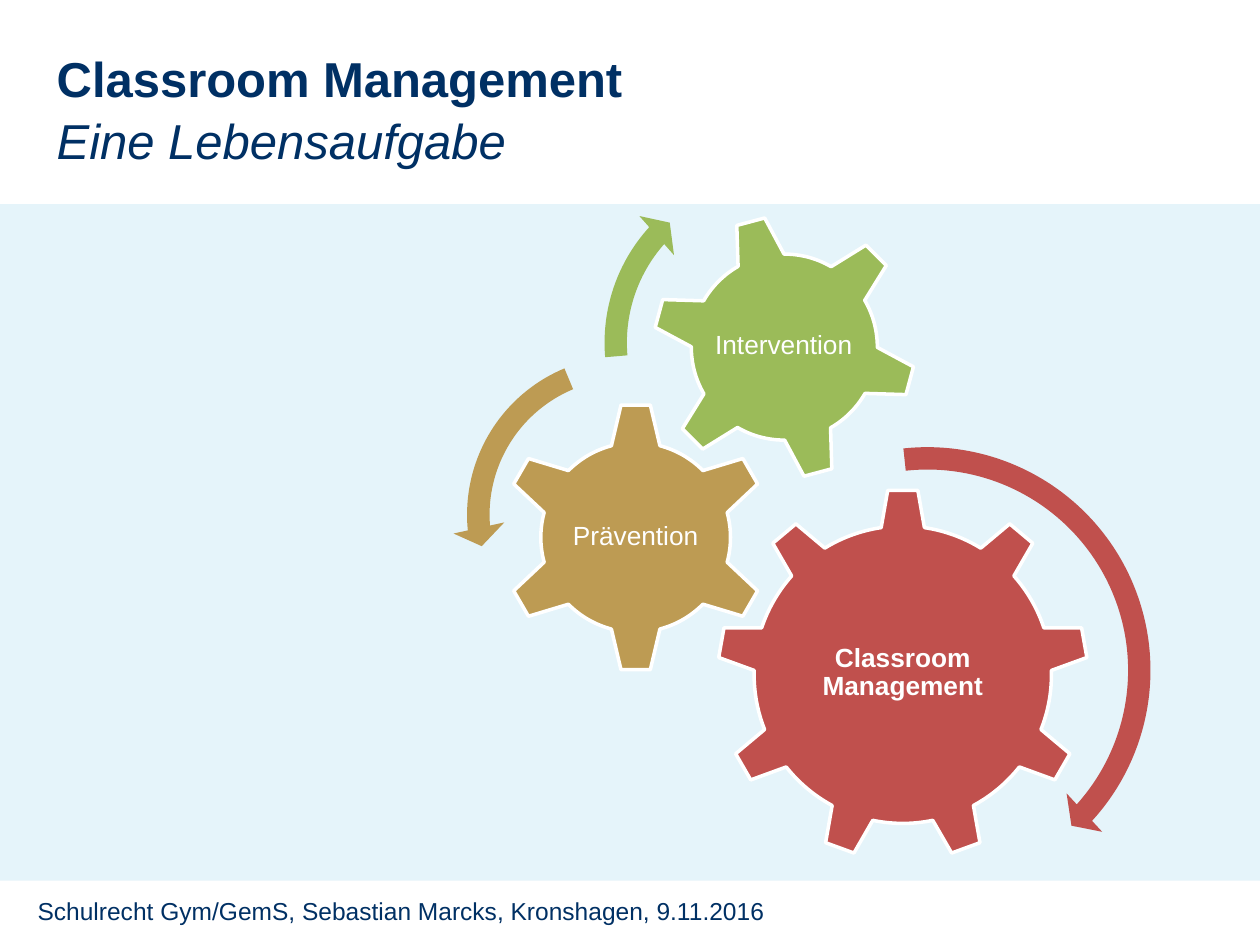
"""Build a slide with three interlocking gears on classroom management."""
from pptx import Presentation
from pptx.dml.color import RGBColor
from pptx.enum.shapes import MSO_SHAPE
from pptx.enum.text import MSO_ANCHOR, MSO_AUTO_SIZE, PP_ALIGN
from pptx.util import Inches, Pt

RECTANGLE = MSO_SHAPE.RECTANGLE
GEAR_6, GEAR_9 = MSO_SHAPE.GEAR_6, MSO_SHAPE.GEAR_9
ARROW, LEFT_ARROW = MSO_SHAPE.CIRCULAR_ARROW, MSO_SHAPE.LEFT_CIRCULAR_ARROW
TOP, MIDDLE = MSO_ANCHOR.TOP, MSO_ANCHOR.MIDDLE
LEFT, CENTER = PP_ALIGN.LEFT, PP_ALIGN.CENTER
NO_AUTOFIT = MSO_AUTO_SIZE.NONE
NAVY, WHITE, PALE_BLUE = "003064", "FFFFFF", "E5F4FA"
RED, OCHRE, GREEN = "C0504D", "BD9B53", "9BBB59"


def add_filled_shape(shapes, kind, box, color):
    shape = shapes.add_shape(kind, *map(Inches, box))
    shape.shadow.inherit = False
    shape.fill.solid()
    shape.fill.fore_color.rgb = RGBColor.from_string(color)
    shape.line.fill.background()
    return shape


def format_text(paragraph, size, color, bold=False, italic=False):
    for run in paragraph.runs:
        run.font.name = "Arial"
        run.font.size = Pt(size)
        run.font.bold = bold
        run.font.italic = italic
        run.font.color.rgb = RGBColor.from_string(color)


presentation = Presentation()
presentation.slide_width = Inches(10)
presentation.slide_height = Inches(7.5)
slide = presentation.slides.add_slide(presentation.slide_layouts[5])

add_filled_shape(slide.shapes, RECTANGLE, (0, 1.62, 10, 5.37), PALE_BLUE)

title = slide.shapes.title
title.left, title.top = Inches(0.35), Inches(0.31)
title.width, title.height = Inches(5.35), Inches(1.04)
title_frame = title.text_frame
title_frame.text = "Classroom Management\nEine Lebensaufgabe"
title_frame.auto_size = NO_AUTOFIT
title_frame.vertical_anchor = TOP
for paragraph, bold in zip(title_frame.paragraphs, (True, False)):
    paragraph.alignment = LEFT
    paragraph.line_spacing = 1.05
    format_text(paragraph, 28, NAVY, bold, not bold)

footer = slide.shapes.add_textbox(Inches(0.2), Inches(7.06), Inches(8.58), Inches(0.52))
footer.text_frame.word_wrap = True
footer.text_frame.text = "Schulrecht Gym/GemS, Sebastian Marcks, Kronshagen, 9.11.2016"
format_text(footer.text_frame.paragraphs[0], 14, NAVY)

gear_group = slide.shapes.add_group_shape()
gears = [
    (GEAR_9, (5.69, 3.88, 2.95, 2.95), 0, RED, "Classroom Management", (6.28, 4.58, 1.77, 1.52), True),
    (GEAR_6, (3.97, 3.19, 2.15, 2.15), 0, OCHRE, "Prävention", (4.51, 3.73, 1.07, 1.06), False),
    (GEAR_6, (5.17, 1.7, 2.11, 2.11), 345, GREEN, "Intervention", (5.63, 2.16, 1.18, 1.18), False),
]
for kind, box, rotation, color, label, label_box, bold in gears:
    gear = add_filled_shape(gear_group.shapes, kind, box, color)
    gear.rotation = rotation
    gear.line.color.rgb = RGBColor.from_string(WHITE)
    gear.line.width = Pt(2)
    text_box = gear_group.shapes.add_textbox(*map(Inches, label_box))
    frame = text_box.text_frame
    frame.word_wrap = True
    frame.vertical_anchor = MIDDLE
    frame.margin_left = frame.margin_right = Inches(0.02)
    frame.margin_top = frame.margin_bottom = Inches(0.02)
    frame.text = label
    paragraph = frame.paragraphs[0]
    paragraph.alignment = CENTER
    paragraph.line_spacing = 0.9
    format_text(paragraph, 15, WHITE, bold)

arrows = [
    (ARROW, (5.47, 3.43, 3.78, 3.78), RED, (0.047, 2.99, 25.31, 158.3, 0.055)),
    (LEFT_ARROW, (3.59, 2.71, 2.75, 2.75), OCHRE, (0.065, 4.3, 104.89, 148.38, 0.075)),
    (ARROW, (4.68, 1.24, 2.96, 2.96), GREEN, (0.06, 3.94, 133.14, 105.08, 0.07)),
]
for kind, box, color, adjustments in arrows:
    arrow = add_filled_shape(gear_group.shapes, kind, box, color)
    for index, value in enumerate(adjustments):
        arrow.adjustments[index] = value

presentation.save("out.pptx")
